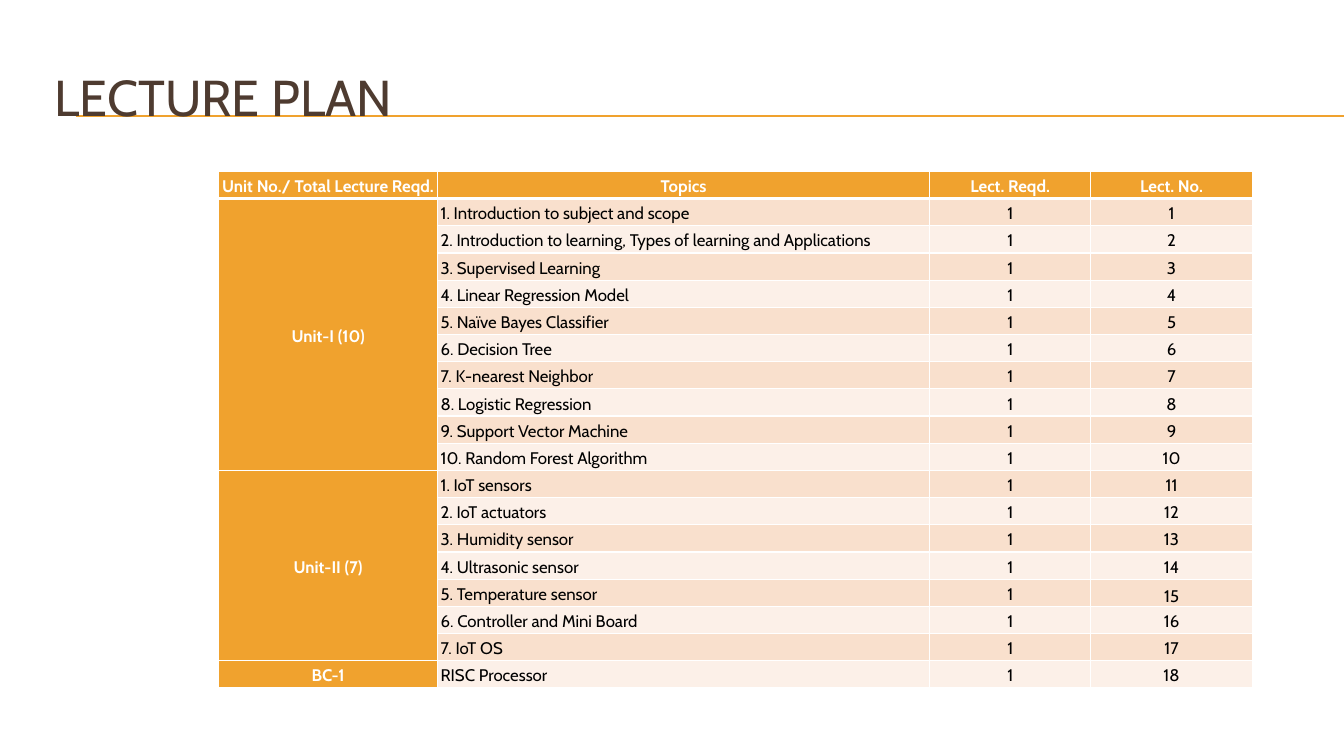
"""Build the lecture plan slide: a ruled title above a table of units and topics."""
from lxml.etree import SubElement
from pptx import Presentation
from pptx.dml.color import RGBColor
from pptx.enum.shapes import MSO_CONNECTOR
from pptx.enum.text import MSO_ANCHOR, MSO_AUTO_SIZE, PP_ALIGN
from pptx.oxml.ns import qn
from pptx.util import Inches, Pt

COLORS = {
    "accent": "F0A22E",
    "title": "4E3B30",
    "odd": "F9E0CD",
    "even": "FCF0E8",
    "white": "FFFFFF",
    "black": "000000",
}
FONT = "Cabin"
HEADERS = ["Unit No./ Total Lecture Reqd.", "Topics", "Lect. Reqd.", "Lect. No."]
UNITS = {
    "Unit-I (10)": [
        "1. Introduction to subject and scope",
        "2. Introduction to learning, Types of learning and Applications",
        "3. Supervised Learning",
        "4. Linear Regression Model",
        "5. Naïve Bayes Classifier",
        "6. Decision Tree",
        "7. K-nearest Neighbor",
        "8. Logistic Regression",
        "9. Support Vector Machine",
        "10. Random Forest Algorithm",
    ],
    "Unit-II (7)": [
        "1. IoT sensors",
        "2. IoT actuators",
        "3. Humidity sensor",
        "4. Ultrasonic sensor",
        "5. Temperature sensor",
        "6. Controller and Mini Board",
        "7. IoT OS",
    ],
    "BC-1": ["RISC Processor"],
}
COLUMN_WIDTHS = [2.17, 4.88, 1.6, 1.6]
TABLE_HEIGHT = 5.13


def style_text(paragraph, size, color, bold, alignment):
    paragraph.font.name = FONT
    paragraph.font.size = Pt(size)
    paragraph.font.bold = bold
    paragraph.font.color.rgb = RGBColor.from_string(COLORS[color])
    paragraph.alignment = alignment


def style_cell(cell, fill, top, bottom):
    properties = cell._tc.get_or_add_tcPr()
    for side, width in (("L", 1), ("R", 1), ("T", top), ("B", bottom)):
        border = SubElement(properties, qn(f"a:ln{side}"), w=str(Pt(width)))
        solid = SubElement(border, qn("a:solidFill"))
        SubElement(solid, qn("a:srgbClr"), val=COLORS["white"])
    cell.fill.solid()
    cell.fill.fore_color.rgb = RGBColor.from_string(COLORS[fill])
    cell.margin_left = cell.margin_right = Inches(0.03)
    cell.margin_top = cell.margin_bottom = 0
    cell.vertical_anchor = MSO_ANCHOR.MIDDLE


presentation = Presentation()
presentation.slide_width = Inches(13.33)
presentation.slide_height = Inches(7.5)
slide = presentation.slides.add_slide(presentation.slide_layouts[5])

title = slide.shapes.title
title.left, title.top, title.width, title.height = map(Inches, (0.44, 0.5, 12.67, 0.92))
title.text_frame.text = "LECTURE PLAN"
title.text_frame.auto_size = MSO_AUTO_SIZE.NONE
title.text_frame.vertical_anchor = MSO_ANCHOR.MIDDLE
style_text(title.text_frame.paragraphs[0], 36, "title", False, PP_ALIGN.LEFT)

for rule_top in (1.15, 1.16):
    rule = slide.shapes.add_connector(
        MSO_CONNECTOR.STRAIGHT,
        Inches(0.75), Inches(rule_top), presentation.slide_width, Inches(rule_top),
    )
    rule.line.color.rgb = RGBColor.from_string(COLORS["accent"])
    rule.line.width = Pt(0.75)
    SubElement(rule._element.spPr, qn("a:effectLst"))
    title._element.addprevious(rule._element)

rows = [HEADERS]
for unit, topics in UNITS.items():
    for topic in topics:
        rows.append([unit if topic == topics[0] else "", topic, "1", str(len(rows))])

table = slide.shapes.add_table(
    len(rows), len(HEADERS),
    Inches(2.17), Inches(1.7), Inches(sum(COLUMN_WIDTHS)), Inches(TABLE_HEIGHT),
).table
for column, width in zip(table.columns, COLUMN_WIDTHS):
    column.width = Inches(width)

for row_index, texts in enumerate(rows):
    table.rows[row_index].height = Inches(TABLE_HEIGHT / len(rows))
    band = "odd" if row_index % 2 else "even"
    for column_index, text in enumerate(texts):
        cell = table.cell(row_index, column_index)
        heading = row_index == 0 or column_index == 0
        style_cell(
            cell,
            "accent" if heading else band,
            top=3 if row_index == 1 else 1,
            bottom=3 if row_index == 0 else 1,
        )
        cell.text = text
        paragraph = cell.text_frame.paragraphs[0]
        paragraph.line_spacing = 1.15
        is_topic = column_index == 1 and not heading
        style_text(
            paragraph, 12, "white" if heading else "black", heading,
            PP_ALIGN.LEFT if is_topic else PP_ALIGN.CENTER,
        )

table.cell(15, 3).vertical_anchor = MSO_ANCHOR.BOTTOM

first_row = 1
for topics in UNITS.values():
    last_row = first_row + len(topics) - 1
    if last_row > first_row:
        table.cell(first_row, 0).merge(table.cell(last_row, 0))
    first_row = last_row + 1

presentation.save("out.pptx")
